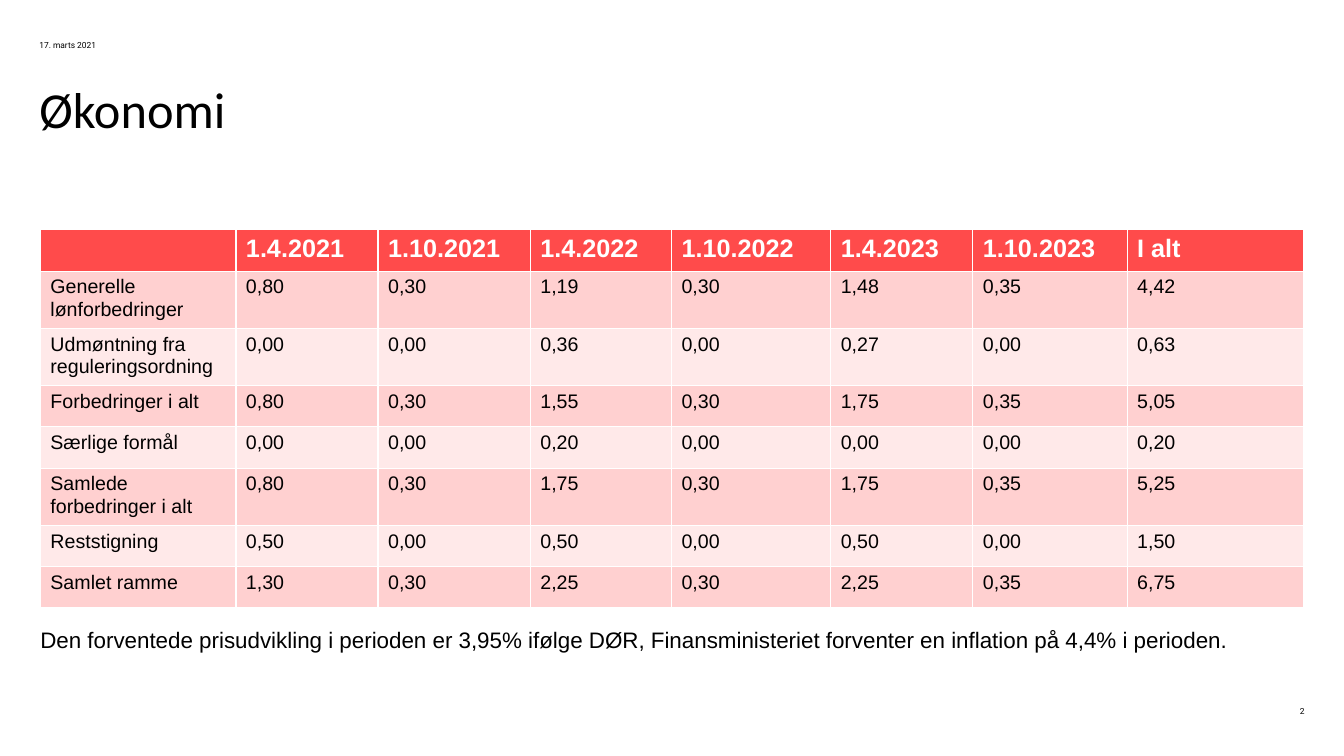
from pptx import Presentation
from pptx.dml.color import RGBColor
from pptx.enum.text import MSO_ANCHOR, PP_ALIGN
from pptx.util import Inches, Pt

BLACK = RGBColor(0x00, 0x00, 0x00)
WHITE = RGBColor(0xFF, 0xFF, 0xFF)
HEADER_RED = RGBColor(0xFF, 0x4B, 0x4B)
BAND_DARK = RGBColor(0xFF, 0xD0, 0xD0)
BAND_LIGHT = RGBColor(0xFF, 0xE9, 0xE9)

COLUMN_WIDTHS = [1.94, 1.41, 1.51, 1.4, 1.58, 1.41, 1.53, 1.75]
ROW_HEIGHT = 0.41
ROWS = [
    ["", "1.4.2021", "1.10.2021", "1.4.2022", "1.10.2022", "1.4.2023", "1.10.2023", "I alt"],
    ["Generelle lønforbedringer", "0,80", "0,30", "1,19", "0,30", "1,48", "0,35", "4,42"],
    ["Udmøntning fra reguleringsordning", "0,00", "0,00", "0,36", "0,00", "0,27", "0,00", "0,63"],
    ["Forbedringer i alt", "0,80", "0,30", "1,55", "0,30", "1,75", "0,35", "5,05"],
    ["Særlige formål", "0,00", "0,00", "0,20", "0,00", "0,00", "0,00", "0,20"],
    ["Samlede forbedringer i alt", "0,80", "0,30", "1,75", "0,30", "1,75", "0,35", "5,25"],
    ["Reststigning", "0,50", "0,00", "0,50", "0,00", "0,50", "0,00", "1,50"],
    ["Samlet ramme", "1,30", "0,30", "2,25", "0,30", "2,25", "0,35", "6,75"],
]


def set_font(paragraph, name, size, color, bold=False):
    paragraph.font.name = name
    paragraph.font.size = Pt(size)
    paragraph.font.color.rgb = color
    paragraph.font.bold = bold


def add_text(page, text, left, top, width, height, name, size, anchor=MSO_ANCHOR.TOP):
    box = page.shapes.add_textbox(Inches(left), Inches(top), Inches(width), Inches(height))
    frame = box.text_frame
    frame.word_wrap = True
    frame.vertical_anchor = anchor
    frame.margin_left = frame.margin_right = frame.margin_top = frame.margin_bottom = 0
    paragraph = frame.paragraphs[0]
    paragraph.text = text
    set_font(paragraph, name, size, BLACK)
    return paragraph


deck = Presentation()
deck.slide_width = Inches(13.33)
deck.slide_height = Inches(7.5)
page = deck.slides.add_slide(deck.slide_layouts[6])

title = add_text(page, "Økonomi", 0.39, 0.88, 12.55, 1.4, "Calibri", 36)
title.line_spacing = 0.83

table = page.shapes.add_table(
    len(ROWS), len(COLUMN_WIDTHS), Inches(0.4), Inches(2.28),
    Inches(sum(COLUMN_WIDTHS)), Inches(ROW_HEIGHT * len(ROWS)),
).table
for column, width in zip(table.columns, COLUMN_WIDTHS):
    column.width = Inches(width)
for row_index, values in enumerate(ROWS):
    is_header = row_index == 0
    band = BAND_DARK if row_index % 2 else BAND_LIGHT
    table.rows[row_index].height = Inches(ROW_HEIGHT)
    for column_index, value in enumerate(values):
        cell = table.cell(row_index, column_index)
        cell.text = value
        cell.fill.solid()
        cell.fill.fore_color.rgb = HEADER_RED if is_header else band
        set_font(cell.text_frame.paragraphs[0], "Arial", 18 if is_header else 14,
                 WHITE if is_header else BLACK, is_header)

add_text(page, "17. marts 2021", 0.39, 0.39, 1.08, 0.12, "Roboto", 6, MSO_ANCHOR.MIDDLE)
page_number = add_text(page, "2", 12.56, 6.99, 0.38, 0.12, "Roboto", 6, MSO_ANCHOR.MIDDLE)
page_number.alignment = PP_ALIGN.RIGHT
add_text(
    page,
    "Den forventede prisudvikling i perioden er 3,95% ifølge DØR, "
    "Finansministeriet forventer en inflation på 4,4% i perioden.",
    0.4, 6.21, 12.55, 0.27, "Arial", 16,
)

deck.save("out.pptx")
